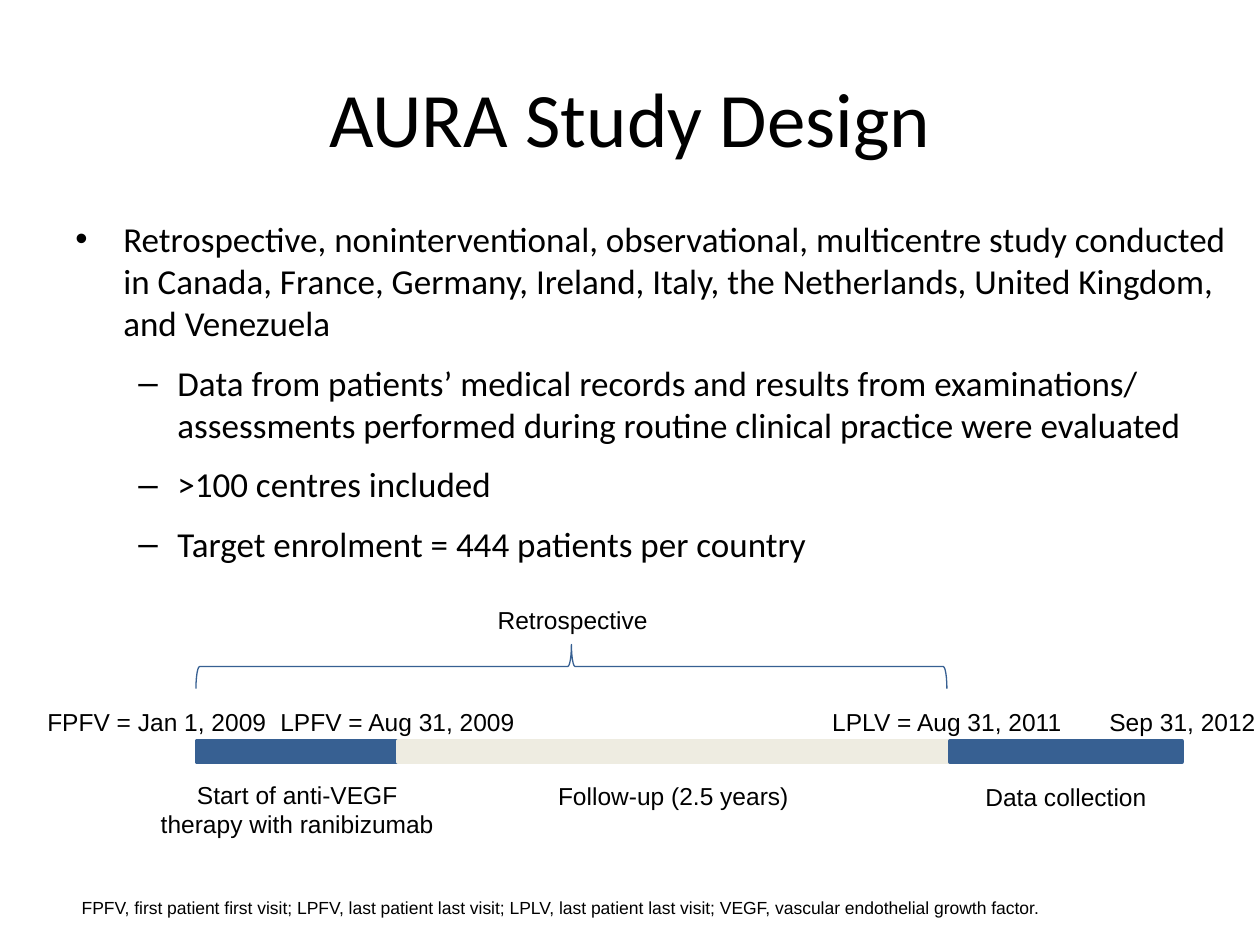
from dataclasses import dataclass

from lxml import etree
from pptx import Presentation
from pptx import util as u
from pptx.dml.color import RGBColor
from pptx.enum import shapes, text
from pptx.oxml.ns import qn

Inches, Pt = u.Inches, u.Pt


@dataclass
class Theme:
    ink: RGBColor = RGBColor(0x00, 0x00, 0x00)
    blue: RGBColor = RGBColor(0x37, 0x60, 0x92)
    cream: RGBColor = RGBColor(0xEE, 0xEC, 0xE1)
    text_font: str = "Calibri"
    label_font: str = "Arial"
    title: int = 44
    body: int = 20
    label: int = 14
    note: int = 10


theme = Theme()
CENTER, LEFT = text.PP_ALIGN.CENTER, text.PP_ALIGN.LEFT


def format_paragraph(p, font, size, align=LEFT):
    p.alignment = align
    for r in p.runs:
        r.font.name = font
        r.font.size = Pt(size)
        r.font.color.rgb = theme.ink


def add_text(words, x, y, w, h, font=theme.label_font, size=theme.label, align=CENTER):
    tf = s.shapes.add_textbox(Inches(x), Inches(y), Inches(w), Inches(h)).text_frame
    tf.word_wrap = True
    tf.text = words
    format_paragraph(tf.paragraphs[0], font, size, align)
    return tf


prs = Presentation()
prs.slide_width, prs.slide_height = Inches(10), Inches(7.5)
s = prs.slides.add_slide(prs.slide_layouts[6])

# Title
tf = add_text("AURA Study Design", 0.5, 0.3, 9, 1.25, theme.text_font, theme.title)
tf.vertical_anchor = text.MSO_ANCHOR.MIDDLE

# Bulleted description: level and words
points = [
    (0, "Retrospective, noninterventional, observational, multicentre study conducted "
        "in Canada, France, Germany, Ireland, Italy, the Netherlands, United Kingdom, "
        "and Venezuela"),
    (1, "Data from patients’ medical records and results from examinations/\v"
        "assessments performed during routine clinical practice were evaluated"),
    (1, ">100 centres included"),
    (1, "Target enrolment = 444 patients per country"),
]
bullets = [("•", 0.38, -0.38), ("–", 0.81, -0.31)]
tf = s.shapes.add_textbox(Inches(0.5), Inches(1.68), Inches(9.39), Inches(2.61)).text_frame
tf.word_wrap = True
for i, (level, words) in enumerate(points):
    p = tf.paragraphs[0] if i == 0 else tf.add_paragraph()
    p.text = words
    p.level = level
    p.space_before = Pt(4 if i else 0)
    p.space_after = Pt(6)
    mark, margin, indent = bullets[level]
    pPr = p._p.get_or_add_pPr()
    pPr.set("marL", str(Inches(margin)))
    pPr.set("indent", str(Inches(indent)))
    etree.SubElement(pPr, qn("a:buFont"), typeface=theme.label_font)
    etree.SubElement(pPr, qn("a:buChar"), char=mark)
    format_paragraph(p, theme.text_font, theme.body)

# Timeline bar: left, width, colour
phases = [(1.56, 1.61, theme.blue), (3.16, 4.37, theme.cream), (7.54, 1.84, theme.blue)]
for x, w, color in phases:
    sp = s.shapes.add_shape(shapes.MSO_SHAPE.RECTANGLE,
                            Inches(x), Inches(5.88), Inches(w), Inches(0.17))
    sp.shadow.inherit = False
    sp.fill.solid()
    sp.fill.fore_color.rgb = color
    sp.line.color.rgb = color
    sp.line.width = Pt(2)

# Brace over the retrospective period
sp = s.shapes.add_shape(shapes.MSO_SHAPE.LEFT_BRACE,
                        Inches(4.36), Inches(2.31), Inches(0.35), Inches(5.96))
sp.rotation = 90
sp.shadow.inherit = False
sp.fill.background()
sp.line.color.rgb = theme.blue
sp.line.width = Pt(0.75)
add_text("Retrospective", 3.44, 4.75, 2.21, 0.34)

# Milestone dates above the bar
dates = [
    ("FPFV = Jan 1, 2009", 0.14),
    ("LPFV = Aug 31, 2009", 2.05),
    ("LPLV = Aug 31, 2011", 6.41),
    ("Sep 31, 2012", 8.28),
]
for words, x in dates:
    add_text(words, x, 5.56, 2.21, 0.34)

# Phase names below the bar
add_text("Start of anti-VEGF therapy with ranibizumab", 1.16, 6.14, 2.4, 0.57)
add_text("Follow-up (2.5 years)", 3.16, 6.15, 4.37, 0.34)
add_text("Data collection", 7.54, 6.16, 1.84, 0.34)

# Abbreviations
add_text("FPFV, first patient first visit; LPFV, last patient last visit; "
         "LPLV, last patient last visit; VEGF, vascular endothelial growth factor.",
         0.55, 7.07, 9.22, 0.28, size=theme.note, align=LEFT)

prs.save("out.pptx")
